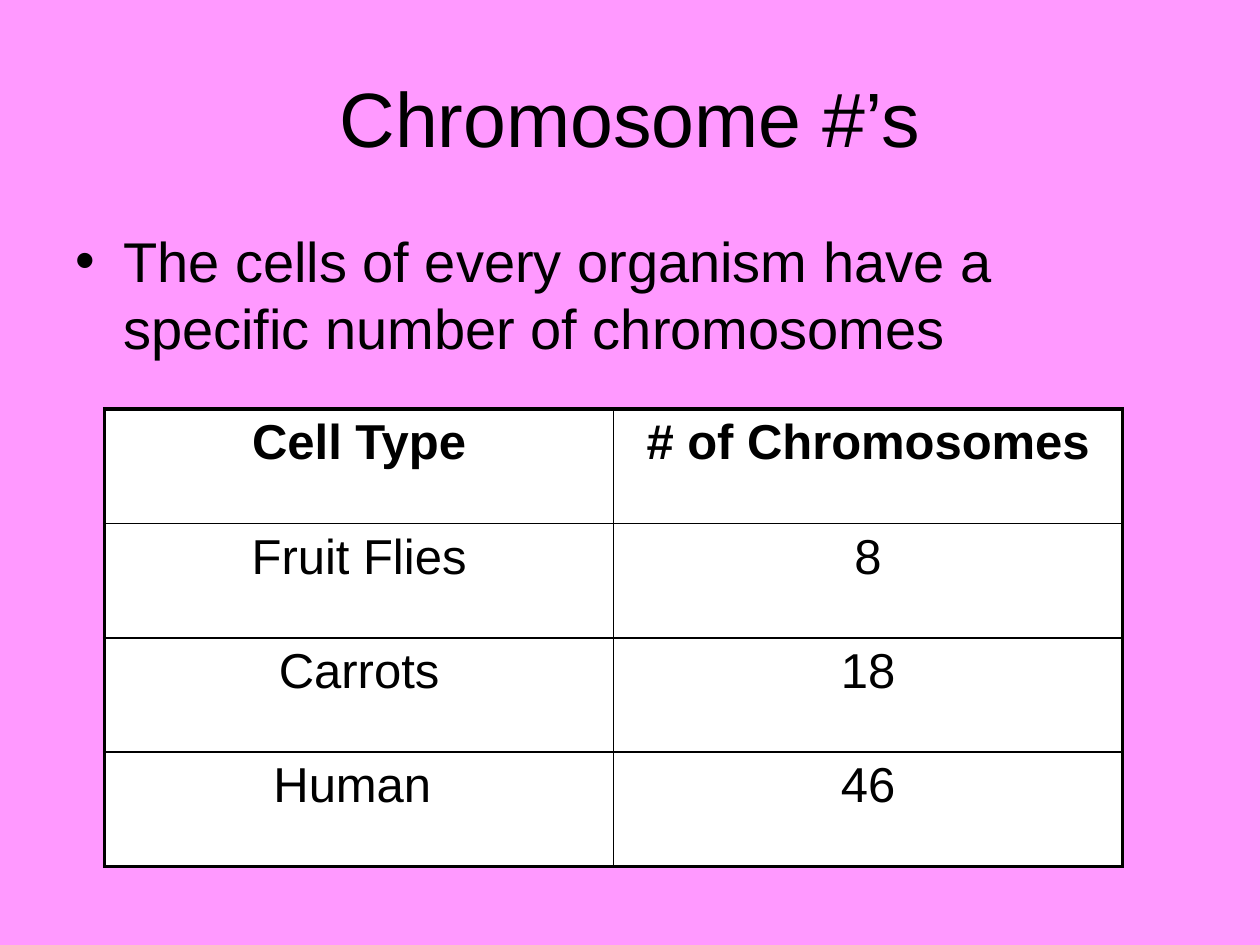
from lxml.etree import SubElement
from pptx import Presentation
from pptx.dml.color import RGBColor
from pptx.enum.text import MSO_ANCHOR, PP_ALIGN
from pptx.oxml.ns import qn
from pptx.util import Inches, Pt

WIDE, HIGH = Inches(10), Inches(7.5)
INK, PAPER, PINK = "000000", "FFFFFF", "FF99FF"
ROWS = [
    ("Cell Type", "# of Chromosomes"),
    ("Fruit Flies", "8"),
    ("Carrots", "18"),
    ("Human ", "46"),
]


def paint(fill, color):
    fill.solid()
    fill.fore_color.rgb = RGBColor.from_string(color)


def place(shape, left, top, width, height):
    spot = {
        "left": int(WIDE * left),
        "top": int(HIGH * top),
        "width": int(WIDE * width),
        "height": int(HIGH * height),
    }
    for name, value in spot.items():
        setattr(shape, name, value)


def write(frame, text, size, align, bold=False):
    para = frame.paragraphs[0]
    para.alignment = align
    run = para.add_run()
    run.text = text
    look = {"name": "Arial", "size": Pt(size), "bold": bold}
    for name, value in look.items():
        setattr(run.font, name, value)
    paint(run.font.fill, INK)
    return para


def add_title(slide, text):
    title = slide.shapes.title
    place(title, 0.05, 0.04, 0.9, 1 / 6)
    title.text_frame.vertical_anchor = MSO_ANCHOR.MIDDLE
    write(title.text_frame, text, 44, PP_ALIGN.CENTER)


def add_bullet(slide, text):
    box = slide.shapes.add_textbox(0, 0, 0, 0)
    place(box, 0.05, 0.233, 0.9, 0.66)
    box.text_frame.word_wrap = True
    para = write(box.text_frame, text, 32, PP_ALIGN.LEFT)
    props = para._p.get_or_add_pPr()
    indent = Inches(0.38)
    props.set("marL", str(indent))
    props.set("indent", str(-indent))
    SubElement(props, qn("a:buFont"), typeface="Arial")
    SubElement(props, qn("a:buChar"), char="•")


def edge(cell, side, width):
    line = SubElement(cell._tc.get_or_add_tcPr(), qn("a:ln" + side), w=str(Pt(width)))
    fill = SubElement(line, qn("a:solidFill"))
    SubElement(fill, qn("a:srgbClr"), val=INK)


def add_grid(slide, rows):
    count, wide = len(rows), len(rows[0])
    frame = slide.shapes.add_table(
        count, wide, int(WIDE * 0.083), int(HIGH * 0.433),
        int(WIDE * 0.808), int(HIGH * 0.484),
    )
    table = frame.table
    table.horz_banding = False
    for r, row in enumerate(rows):
        for c, text in enumerate(row):
            cell = table.cell(r, c)
            outer = {"L": c == 0, "R": c == wide - 1, "T": r == 0, "B": r == count - 1}
            for side, thick in outer.items():
                edge(cell, side, 2.25 if thick else 1)
            paint(cell.fill, PAPER)
            write(cell.text_frame, text, 28, PP_ALIGN.CENTER, r == 0)


def main():
    deck = Presentation()
    deck.slide_width, deck.slide_height = WIDE, HIGH
    slide = deck.slides.add_slide(deck.slide_layouts[5])
    paint(slide.background.fill, PINK)
    add_title(slide, "Chromosome #’s")
    add_bullet(slide, "The cells of every organism have a specific number of chromosomes")
    add_grid(slide, ROWS)
    deck.save("out.pptx")


if __name__ == "__main__":
    main()
